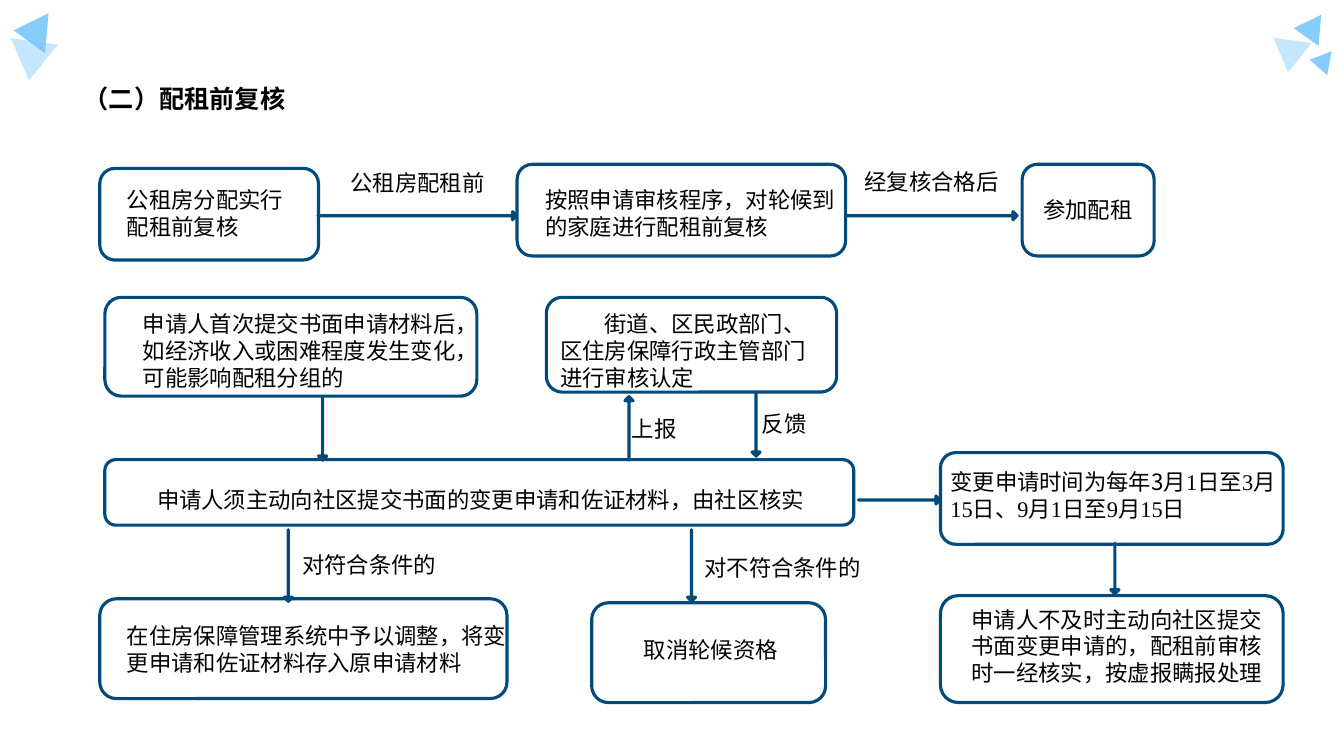
from dataclasses import dataclass
from itertools import cycle

from pptx import Presentation
from pptx.dml.color import RGBColor
from pptx.enum.shapes import MSO_SHAPE
from pptx.enum.text import MSO_ANCHOR, MSO_AUTO_SIZE, PP_ALIGN
from pptx.oxml.ns import qn
from pptx.util import Emu, Inches, Pt
from lxml.etree import SubElement

COLORS = {"line": "014A7C", "text": "000000", "sky": "79C7FD"}
SANS, SERIF = "Noto Sans CJK SC", "Times New Roman"
CELL = Inches(0.1)  # the slide is a grid of 133.3 columns by 75 rows
COLS, ROWS = 133.33, 75
THICK = 0.8  # depth of an arrow head
ONE, TWO, THREE = 3.7, 6.4, 9.1  # depth of one to three lines of text


@dataclass(frozen=True)
class Box:
    col: float
    row: float
    wide: float
    high: float


@dataclass(frozen=True)
class Leaf(Box):
    turn: float
    alpha: int


@dataclass(frozen=True)
class Arrow:
    x: float  # centre
    y: float
    long: float
    turn: int = 0


@dataclass(frozen=True)
class Note(Box):
    runs: tuple[str, ...]  # Chinese and Latin parts in turn
    wrap: bool = True
    first: float = 0


LEAVES = [
    Leaf(0.8, 4.1, 4.7, 3.9, 187.9, 44),
    Leaf(1, 1.5, 4, 3.3, 275, 90),
    Leaf(128.1, 1.6, 3.1, 2.6, 275, 90),
    Leaf(126.1, 4, 3.8, 3.2, 187.9, 44),
    Leaf(129.7, 5.1, 2.4, 2, 280.2, 90),
]
BOXES = [
    # review before allocation
    Box(9.9, 16.7, 21.7, 9.1),
    Box(51.3, 16.3, 32.6, 9.1),
    Box(101.4, 16.3, 13.1, 9.1),
    # change of circumstances
    Box(10.4, 29.5, 36.9, 9.8),
    Box(54.2, 29.5, 28.8, 9.4),
    Box(10.4, 45.6, 74.3, 6.5),
    Box(93.3, 44.9, 34, 9.1),
    # outcomes
    Box(9.9, 59.4, 40.4, 9.9),
    Box(58.7, 59.8, 23.2, 9.9),
    Box(93.3, 59.1, 34, 10.6),
]
ARROWS = [
    Arrow(41.4, 21.4, 19.7),
    Arrow(92.4, 21.4, 17),
    Arrow(32, 42.5, 6.3, 90),
    Arrow(62.4, 42.5, 6.3, 270),
    Arrow(75, 42.1, 6.3, 90),
    Arrow(89.2, 49.6, 8.1),
    Arrow(28.6, 56.1, 7.1, 90),
    Arrow(68.6, 56.1, 7.1, 90),
    Arrow(110.6, 56.4, 5, 90),
]
NOTES = [
    # text in boxes
    Note(11.6, 18, 18.4, TWO, ("公租房分配实行配租前复核",)),
    Note(53.1, 18, 30.8, TWO, ("按照申请审核程序，对轮候到的家庭进行配租前复核",)),
    Note(102.5, 19, 10.9, ONE, ("参加配租",), False),
    Note(13.2, 30.3, 37, THREE,
         ("申请人首次提交书面申请材料后，如经济收入或困难程度发生变化，可能影响配租分组的",)),
    Note(54.6, 30.3, 28.4, THREE,
         ("街道、区民政部门、区住房保障行政主管部门进行审核认定",), first=4.4),
    Note(14.6, 47.7, 66.4, ONE,
         ("申请人须主动向社区提交书面的变更申请和佐证材料，由社区核实",), False),
    Note(93.3, 46, 35.1, TWO,
         ("变更申请时间为每年3月", "1", "日至", "3", "月", "15", "日、", "9",
          "月", "1", "日至", "9", "月", "15", "日")),
    Note(11.6, 61.2, 39.7, TWO,
         ("在住房保障管理系统中予以调整，将变更申请和佐证材料存入原申请材料",)),
    Note(62.9, 62.6, 15.3, ONE, ("取消轮候资格",), False),
    Note(95.4, 59.6, 32.9, THREE,
         ("申请人不及时主动向社区提交书面变更申请的，配租前审核时一经核实，按虚报瞒报处理",)),
    # labels on arrows
    Note(33.8, 16.3, 15.3, ONE, ("公租房配租前",), False),
    Note(84.8, 16.2, 15.3, ONE, ("经复核合格后",), False),
    Note(61.7, 40.7, 6.4, ONE, ("上报",), False),
    Note(74.6, 40.2, 6.4, ONE, ("反馈",), False),
    Note(29, 54.2, 15.3, ONE, ("对符合条件的",), False),
    Note(68.9, 54.5, 17.6, ONE, ("对不符合条件的",), False),
]
TITLE = Note(7.3, 7.8, 55.6, 4, ("（二）配租前复核",))


def span(cells: float) -> Emu:
    return Emu(round(cells * CELL))


def frame(box: Box) -> tuple[Emu, ...]:
    return tuple(span(n) for n in (box.col, box.row, box.wide, box.high))


def hue(name: str) -> RGBColor:
    return RGBColor.from_string(COLORS[name])


def write(shape, note: Note, size: int, bold: bool = False) -> None:
    body = shape.text_frame
    body.word_wrap = note.wrap
    body.auto_size = MSO_AUTO_SIZE.NONE
    body.vertical_anchor = MSO_ANCHOR.TOP
    para = body.paragraphs[0]
    para.alignment = PP_ALIGN.LEFT
    if note.first:
        para._p.get_or_add_pPr().set("indent", str(span(note.first)))
    for text, face in zip(note.runs, cycle((SANS, SERIF))):
        run = para.add_run()
        run.text = text
        font = run.font
        font.size, font.bold, font.name = Pt(size), bold, face
        font.color.rgb = hue("text")
        SubElement(run._r.get_or_add_rPr(), qn("a:ea")).set("typeface", SANS)


def outline(shape) -> None:
    shape.shadow.inherit = False
    shape.fill.background()
    shape.line.color.rgb = hue("line")
    shape.line.width = Pt(2.25)


def draw_leaf(shapes, leaf: Leaf) -> None:
    shape = shapes.add_shape(MSO_SHAPE.ISOSCELES_TRIANGLE, *frame(leaf))
    shape.rotation = leaf.turn
    shape.shadow.inherit = False
    shape.line.fill.background()
    shape.fill.solid()
    shape.fill.fore_color.rgb = hue("sky")
    tint = shape._element.spPr.find(qn("a:solidFill"))[0]
    SubElement(tint, qn("a:alpha")).set("val", str(leaf.alpha * 1000))


def draw_arrow(shapes, arrow: Arrow) -> None:
    box = Box(arrow.x - arrow.long / 2, arrow.y - THICK / 2, arrow.long, THICK)
    shape = shapes.add_shape(MSO_SHAPE.RIGHT_ARROW, *frame(box))
    shape.adjustments[0] = 0
    shape.adjustments[1] = 0.5
    shape.rotation = arrow.turn
    outline(shape)


def main() -> None:
    deck = Presentation()
    deck.slide_width, deck.slide_height = span(COLS), span(ROWS)
    slide = deck.slides.add_slide(deck.slide_layouts.get_by_name("Title Only"))
    shapes = slide.shapes

    # corner decoration
    for leaf in LEAVES:
        draw_leaf(shapes, leaf)

    # title
    head = shapes.title
    head.left, head.top, head.width, head.height = frame(TITLE)
    write(head, TITLE, 18, True)

    # flow chart
    for box in BOXES:
        outline(shapes.add_shape(MSO_SHAPE.ROUNDED_RECTANGLE, *frame(box)))
    for arrow in ARROWS:
        draw_arrow(shapes, arrow)
    for note in NOTES:
        write(shapes.add_textbox(*frame(note)), note, 16)

    deck.save("out.pptx")


if __name__ == "__main__":
    main()
